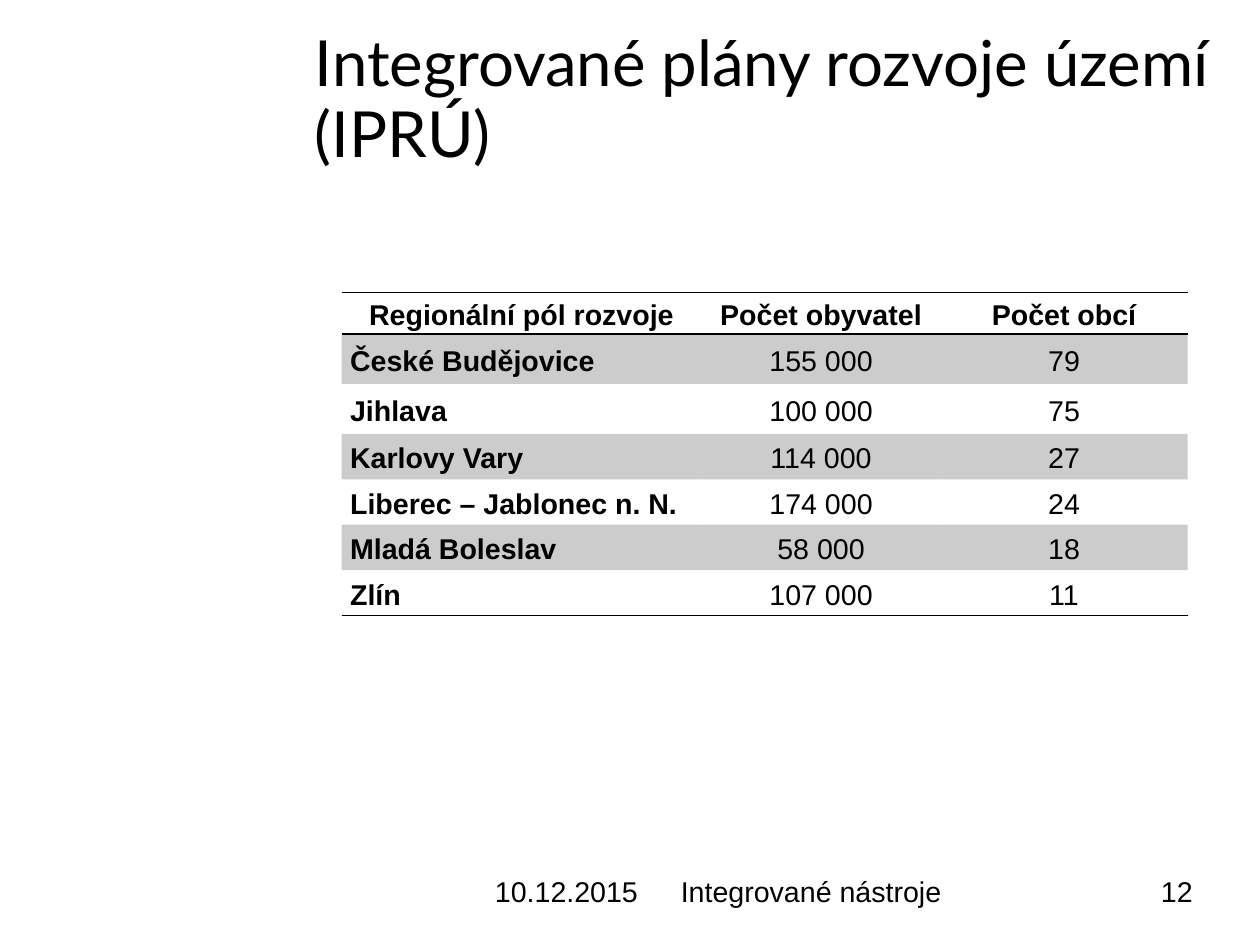
from lxml.etree import SubElement
from pptx import Presentation
from pptx.dml.color import RGBColor
from pptx.enum.text import MSO_ANCHOR as Anchor, PP_ALIGN as Align
from pptx.oxml.ns import qn
from pptx.util import Pt

PX = 3600
BLACK = RGBColor(0, 0, 0)
NO_STYLE = "{2D5ABB26-0587-4C30-8999-92F81FD0307C}"

COLUMN_WIDTHS = [800, 531, 549]
ROW_HEIGHTS = [92, 111, 111, 101, 101, 101, 101]
REGIONS = [
    ("Regionální pól rozvoje", "Počet obyvatel", "Počet obcí"),
    ("České Budějovice", "155 000", "79"),
    ("Jihlava", "100 000", "75"),
    ("Karlovy Vary", "114 000", "27"),
    ("Liberec – Jablonec n. N.", "174 000", "24"),
    ("Mladá Boleslav", "58 000", "18"),
    ("Zlín", "107 000", "11"),
]


class SlideBuilder:
    def __init__(self, slide, font="Arial", size=18):
        self.slide = slide
        self.font = font
        self.size = size

    def format_text(self, paragraph, font=None, size=None, bold=False, spacing=1.0, align=Align.LEFT):
        paragraph.alignment = align
        paragraph.line_spacing = spacing
        for run in paragraph.runs:
            run.font.name = font or self.font
            run.font.size = Pt(size or self.size)
            run.font.bold = bold
            run.font.color.rgb = BLACK

    def text(self, words, left, top, width, height, anchor=Anchor.TOP, **style):
        shape = self.slide.shapes.add_textbox(left * PX, top * PX, width * PX, height * PX)
        text_frame = shape.text_frame
        text_frame.word_wrap = True
        text_frame.vertical_anchor = anchor
        text_frame.margin_left = text_frame.margin_right = 0
        text_frame.margin_top = text_frame.margin_bottom = 0
        text_frame.text = words
        self.format_text(text_frame.paragraphs[0], **style)

    def border(self, cell, side):
        properties = cell._tc.get_or_add_tcPr()
        line = SubElement(properties, qn(f"a:{side}"), w=str(Pt(1)))
        fill = SubElement(line, qn("a:solidFill"))
        SubElement(fill, qn("a:srgbClr"), val=str(BLACK))

    def shade(self, cell, percent):
        cell.fill.solid()
        cell.fill.fore_color.rgb = BLACK
        color = cell._tc.tcPr.find(qn("a:solidFill")).find(qn("a:srgbClr"))
        SubElement(color, qn("a:alpha"), val=str(percent * 1000))

    def table(self, rows, left, top, widths, heights):
        frame = self.slide.shapes.add_table(
            len(rows), len(widths), left * PX, top * PX, sum(widths) * PX, sum(heights) * PX
        )
        table = frame.table
        table.first_row = table.horz_banding = False
        table._tbl.tblPr.find(qn("a:tableStyleId")).text = NO_STYLE
        for column, width in zip(table.columns, widths):
            column.width = width * PX
        for row, height in zip(table.rows, heights):
            row.height = height * PX
        for row_index, row in enumerate(rows):
            for column_index, words in enumerate(row):
                self.cell(table.cell(row_index, column_index), words, row_index, column_index, len(rows))

    def cell(self, cell, words, row_index, column_index, row_count):
        is_header = row_index == 0
        is_name = column_index == 0
        cell.text_frame.text = words
        cell.vertical_anchor = Anchor.MIDDLE
        cell.margin_left = cell.margin_right = 19 * PX
        cell.margin_top = cell.margin_bottom = 0
        self.format_text(
            cell.text_frame.paragraphs[0],
            bold=is_header or is_name,
            spacing=1.15,
            align=Align.LEFT if is_name and not is_header else Align.CENTER,
        )
        if is_header:
            self.border(cell, "lnT")
        if is_header or row_index == row_count - 1:
            self.border(cell, "lnB")
        if row_index % 2:
            self.shade(cell, 20)
        else:
            cell.fill.background()


def main():
    presentation = Presentation()
    presentation.slide_width = 2800 * PX
    presentation.slide_height = 2100 * PX
    builder = SlideBuilder(presentation.slides.add_slide(presentation.slide_layouts[6]))

    builder.text(
        "Integrované plány rozvoje území (IPRÚ)", 700, 66, 2048, 315,
        anchor=Anchor.MIDDLE, font="Lato", size=40, spacing=0.93,
    )
    builder.table(REGIONS, 759, 650, COLUMN_WIDTHS, ROW_HEIGHTS)
    for words, left, width in [
        ("10.12.2015", 1100, 650),
        ("Integrované nástroje", 1513, 884),
        ("12", 2580, 208),
    ]:
        builder.text(words, left, 1942, width, 142)

    presentation.save("out.pptx")


if __name__ == "__main__":
    main()
